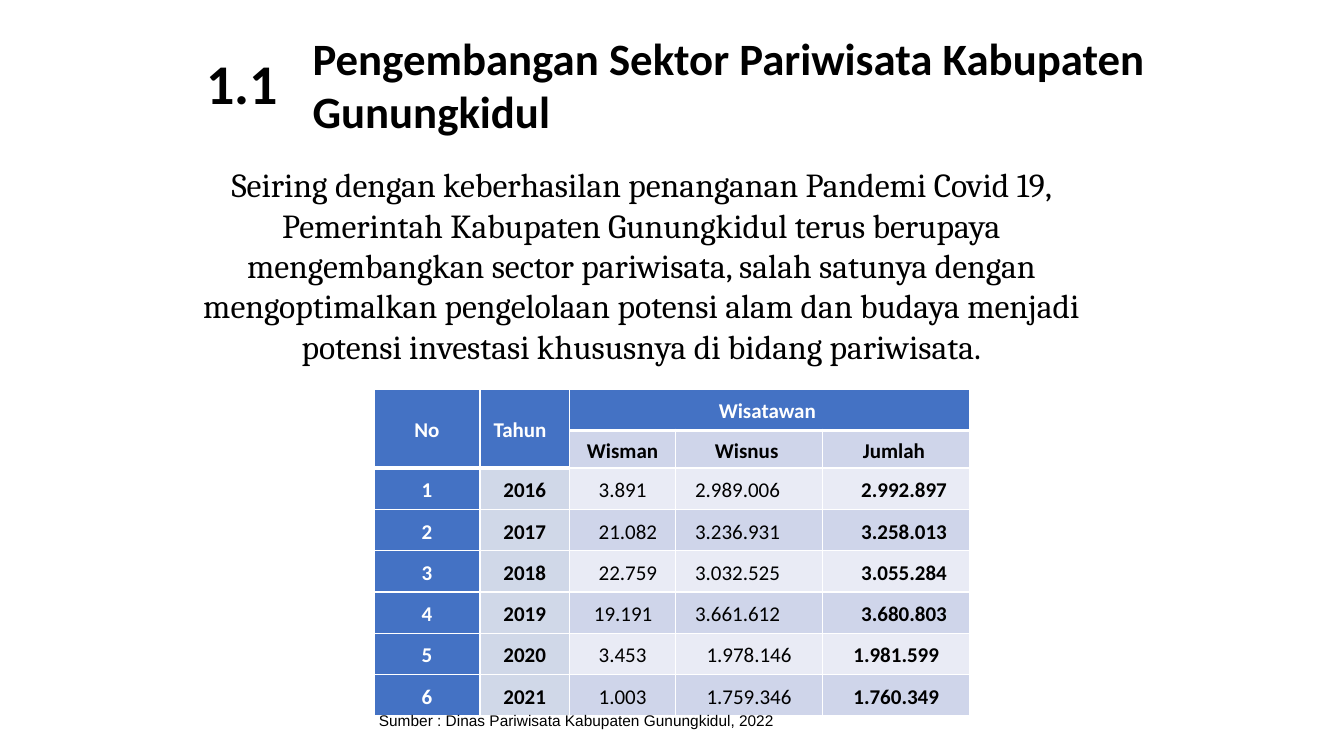
from dataclasses import dataclass

from lxml.etree import SubElement
from pptx import Presentation
from pptx.dml.color import RGBColor
from pptx.enum.text import MSO_ANCHOR, MSO_AUTO_SIZE, PP_ALIGN
from pptx.oxml.ns import qn
from pptx.util import Inches, Pt

BLACK, WHITE, BLUE = "000000", "FFFFFF", "4472C4"
YEAR_FILL, LIGHT_BAND, DARK_BAND = "D0D8E8", "E9EBF5", "CFD5EA"
SPACE = 0.047  # width of one Calibri space at 15 pt, in inches


@dataclass
class Style:
    size: float
    font: str = "Calibri"
    bold: bool = False
    color: str = BLACK
    align: PP_ALIGN = PP_ALIGN.LEFT


@dataclass
class Entry:
    """A table cell; before and after push its text sideways, in spaces."""
    row: int
    column: int
    text: str
    fill: str
    style: Style
    before: int = 0
    after: int = 0
    rows: int = 1
    columns: int = 1


@dataclass
class Visits:
    year: str
    foreign: str
    domestic: str
    total: str
    indents: tuple[int, int, int] | None = None  # None centres the figures


HEADER = Style(15, bold=True, color=WHITE, align=PP_ALIGN.CENTER)
LABEL = Style(15, bold=True, align=PP_ALIGN.CENTER)

COLUMN_WIDTHS = [1.05, 0.89, 1.05, 1.46, 1.46]
ROW_HEIGHTS = [0.41, 0.3] + [0.41] * 6
VISITS = [
    Visits("2016", "3.891", "2.989.006", "2.992.897", (4, 2, 6)),
    Visits("2017", "21.082", "3.236.931", "3.258.013", (4, 2, 6)),
    Visits("2018", "22.759", "3.032.525", "3.055.284", (4, 2, 6)),
    Visits("2019", "19.191", "3.661.612", "3.680.803", (3, 2, 6)),
    Visits("2020", "3.453", "1.978.146", "1.981.599"),
    Visits("2021", "1.003", "1.759.346", "1.760.349"),
]


def rgb(color: str) -> RGBColor:
    return RGBColor.from_string(color)


def write(frame, text: str, style: Style, line_spacing: float = 1.0) -> None:
    frame.text = text
    paragraph = frame.paragraphs[0]
    layout = {"alignment": style.align, "line_spacing": line_spacing, "space_before": Pt(0)}
    for name, value in layout.items():
        setattr(paragraph, name, value)
    font = paragraph.runs[0].font
    for name, value in {"name": style.font, "size": Pt(style.size), "bold": style.bold}.items():
        setattr(font, name, value)
    font.color.rgb = rgb(style.color)


def place(shape, box: tuple[float, float, float, float], text: str, style: Style,
          wrap: bool = True) -> None:
    """Position a text shape and fill it with one styled paragraph."""
    for name, value in zip(("left", "top", "width", "height"), box):
        setattr(shape, name, Inches(value))
    frame = shape.text_frame
    frame_format = {"word_wrap": wrap, "auto_size": MSO_AUTO_SIZE.NONE,
                    "vertical_anchor": MSO_ANCHOR.TOP}
    for name, value in frame_format.items():
        setattr(frame, name, value)
    write(frame, text, style)


def remove_bullet(paragraph) -> None:
    properties = paragraph._p.get_or_add_pPr()
    properties.set("marL", "0")
    properties.set("indent", "0")
    SubElement(properties, qn("a:buNone"))


def draw_borders(cell, bottom_width: float) -> None:
    properties = cell._tc.get_or_add_tcPr()
    for side, width in {"L": 1, "R": 1, "T": 1, "B": bottom_width}.items():
        line = SubElement(properties, qn(f"a:ln{side}"), w=str(Pt(width)))
        SubElement(SubElement(line, qn("a:solidFill")), qn("a:srgbClr"), val=WHITE)


def draw_entry(table, entry: Entry) -> None:
    cell = table.cell(entry.row, entry.column)
    if entry.rows * entry.columns > 1:
        cell.merge(table.cell(entry.row + entry.rows - 1, entry.column + entry.columns - 1))
    top_row = entry.row == 0
    draw_borders(cell, 3 if top_row else 1)
    cell.fill.solid()
    cell.fill.fore_color.rgb = rgb(entry.fill)
    edge = 0.04 if top_row else 0
    cell_format = {
        "vertical_anchor": MSO_ANCHOR.MIDDLE,
        "margin_left": Inches(0.1 + entry.before * SPACE),
        "margin_right": Inches(0.1 + entry.after * SPACE),
        "margin_top": Inches(edge),
        "margin_bottom": Inches(edge),
    }
    for name, value in cell_format.items():
        setattr(cell, name, value)
    write(cell.text_frame, entry.text, entry.style, 1.15)


def visitor_entries() -> list[Entry]:
    entries = [
        Entry(0, 0, "No", BLUE, HEADER, rows=2),
        Entry(0, 1, "Tahun", BLUE, HEADER, after=2, rows=2),
        Entry(0, 2, "Wisatawan", BLUE, HEADER, after=1, columns=3),
        Entry(1, 2, "Wisman", DARK_BAND, LABEL),
        Entry(1, 3, "Wisnus", DARK_BAND, LABEL, after=1),
        Entry(1, 4, "Jumlah", DARK_BAND, LABEL, after=1),
    ]
    for number, visits in enumerate(VISITS, start=1):
        row = number + 1
        band = LIGHT_BAND if number % 2 else DARK_BAND
        align = PP_ALIGN.LEFT if visits.indents else PP_ALIGN.CENTER
        figures = (visits.foreign, visits.domestic, visits.total)
        entries += [Entry(row, 0, str(number), BLUE, HEADER),
                    Entry(row, 1, visits.year, YEAR_FILL, LABEL)]
        for column, (figure, indent) in enumerate(zip(figures, visits.indents or (0, 0, 0)), 2):
            style = Style(15, bold=column == 4, align=align)
            entries.append(Entry(row, column, figure, band, style, before=indent))
    return entries


def draw_visitor_table(slide) -> None:
    table = slide.shapes.add_table(
        len(ROW_HEIGHTS), len(COLUMN_WIDTHS), Inches(3.71), Inches(3.86),
        Inches(sum(COLUMN_WIDTHS)), Inches(sum(ROW_HEIGHTS))).table
    for column, width in zip(table.columns, COLUMN_WIDTHS):
        column.width = Inches(width)
    for row, height in zip(table.rows, ROW_HEIGHTS):
        row.height = Inches(height)
    for entry in visitor_entries():
        draw_entry(table, entry)


def main() -> None:
    presentation = Presentation()
    presentation.slide_width = Inches(13.33)
    presentation.slide_height = Inches(7.5)
    slide = presentation.slides.add_slide(presentation.slide_layouts[1])

    place(slide.shapes.title, (3, 0.25, 8.72, 1.18),
          "Pengembangan Sektor Pariwisata Kabupaten Gunungkidul", Style(32, bold=True))
    introduction = slide.placeholders[1]
    place(introduction, (1.89, 1.58, 8.94, 2.12),
          "Seiring dengan keberhasilan penanganan Pandemi Covid 19, Pemerintah Kabupaten "
          "Gunungkidul terus berupaya mengembangkan sector pariwisata, salah satunya dengan "
          "mengoptimalkan pengelolaan potensi alam dan budaya menjadi potensi investasi "
          "khususnya di bidang pariwisata.",
          Style(24, "Cambria", align=PP_ALIGN.CENTER))
    remove_bullet(introduction.text_frame.paragraphs[0])

    section_number = slide.shapes.add_textbox(0, 0, 0, 0)
    place(section_number, (1.95, 0.43, 1.05, 0.77), "1.1", Style(40, bold=True), wrap=False)
    draw_visitor_table(slide)
    source_note = slide.shapes.add_textbox(0, 0, 0, 0)
    place(source_note, (3.66, 7.01, 5.04, 0.29),
          "Sumber : Dinas Pariwisata Kabupaten Gunungkidul, 2022", Style(11, "Arial"))

    presentation.save("out.pptx")


if __name__ == "__main__":
    main()
